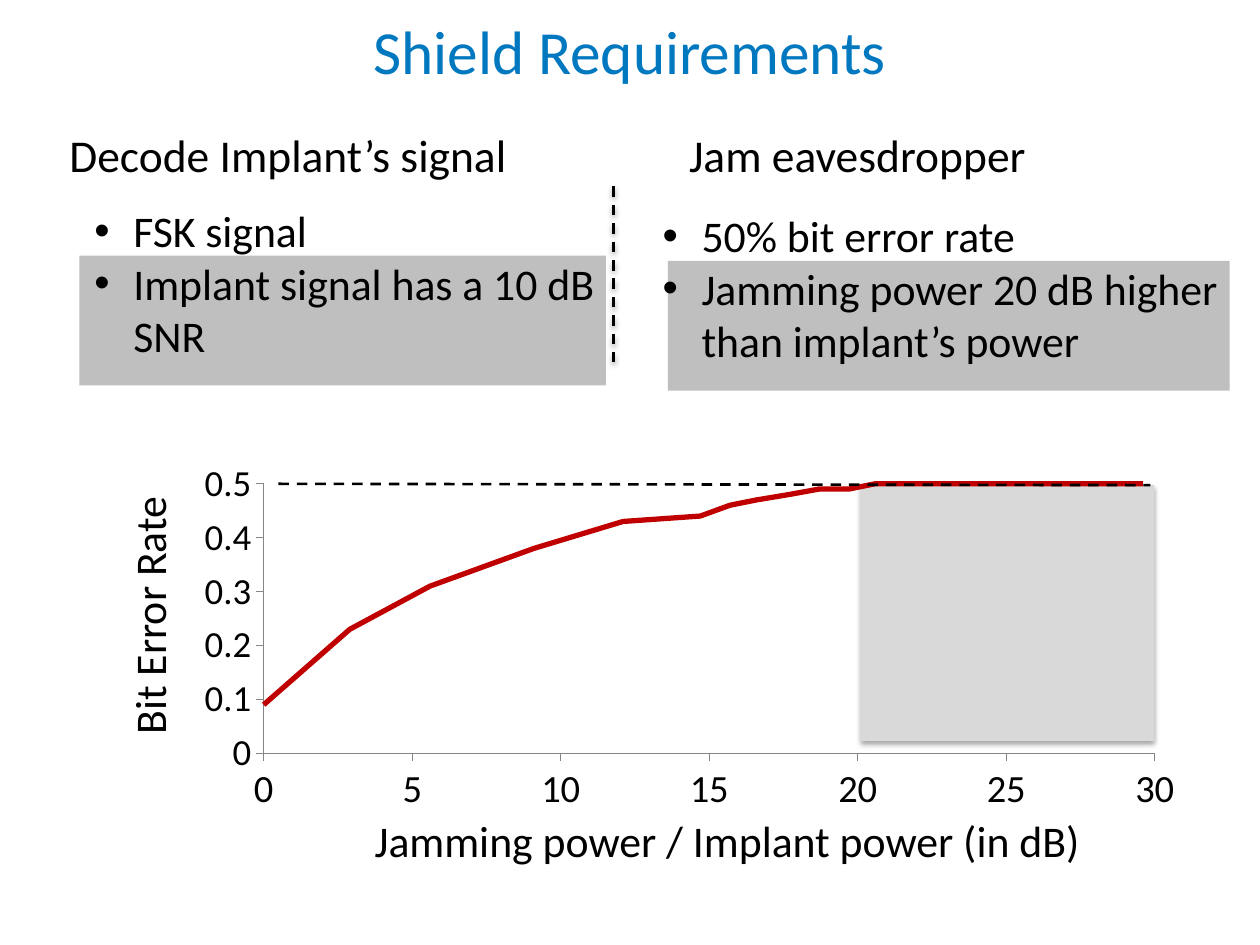
from dataclasses import dataclass

from lxml import etree
from pptx import Presentation
from pptx.chart.data import XyChartData
from pptx.dml.color import RGBColor
from pptx.enum.chart import XL_CHART_TYPE as ChartType, XL_TICK_MARK as TickMark
from pptx.enum.dml import MSO_LINE_DASH_STYLE as Dash
from pptx.enum.shapes import MSO_CONNECTOR as Connector, MSO_SHAPE as Shape
from pptx.enum.text import MSO_ANCHOR as Anchor, PP_ALIGN as Align
from pptx.oxml import parse_xml
from pptx.oxml.ns import nsdecls, qn
from pptx.util import Emu, Inches, Pt

BLACK = RGBColor(0x00, 0x00, 0x00)
BLUE = RGBColor(0x00, 0x78, 0xC0)
RED = RGBColor(0xC0, 0x00, 0x00)
MID_GRAY = RGBColor(0xBF, 0xBF, 0xBF)
LIGHT_GRAY = RGBColor(0xD9, 0xD9, 0xD9)
AXIS_GRAY = RGBColor(0x86, 0x86, 0x86)
FONT = "Calibri"
BODY_SIZE = 25


@dataclass(frozen=True)
class Box:
    left: float
    top: float
    width: float
    height: float

    def emu(self) -> tuple[Emu, ...]:
        return tuple(Inches(v) for v in (self.left, self.top, self.width, self.height))


@dataclass(frozen=True)
class Panel:
    box: Box
    color: RGBColor
    shadow_alpha: int = 0


@dataclass(frozen=True)
class Label:
    box: Box
    lines: tuple[str, ...]
    size: int = BODY_SIZE
    bulleted: bool = False
    centered: bool = False
    rotation: int = 0


@dataclass(frozen=True)
class DashedLine:
    start: tuple[float, float]
    end: tuple[float, float]
    shadow_alpha: int = 0


@dataclass(frozen=True)
class AxisFormat:
    maximum: float
    step: float
    size: int


PLOT = Box(2.09, 3.84, 7.07, 2.14)
CHART = Box(1.46, 3.6, 8.01, 2.92)
X_AXIS = AxisFormat(30, 5, 22)
Y_AXIS = AxisFormat(0.5, 0.1, 21)

ERROR_RATES = [
    (0, 0.09), (2.9, 0.23), (5.6, 0.31), (9.1, 0.38),
    (12.1, 0.43), (14.7, 0.44), (15.7, 0.46), (16.6, 0.47),
    (17.7, 0.48), (18.7, 0.49), (19.7, 0.49), (20.6, 0.5),
    (22.7, 0.5), (25, 0.5), (26.7, 0.5), (29.6, 0.5),
]

PANELS = [
    Panel(Box(5.3, 2.07, 4.46, 1.03), MID_GRAY),
    Panel(Box(0.63, 2.03, 4.18, 1.03), MID_GRAY),
    Panel(Box(6.83, 3.85, 2.33, 2.03), LIGHT_GRAY, 35),
]
DIVIDER = DashedLine((4.87, 1.48), (4.87, 2.87), 38)
ERROR_LIMIT = DashedLine((2.21, 3.84), (9.13, 3.85))
LABELS = [
    Label(Box(0.37, 0.96, 4.18, 0.54), (" Decode Implant’s signal",), 26),
    Label(Box(5.37, 0.96, 4.18, 0.54), ("Jam eavesdropper",), 26),
    Label(Box(0.65, 1.57, 4.22, 1.36),
          ("FSK signal", "Implant signal has a 10 dB SNR"), bulleted=True),
    Label(Box(5.16, 1.61, 4.61, 1.36),
          ("50% bit error rate", "Jamming power 20 dB higher than implant’s power"),
          bulleted=True),
    Label(Box(1.27, 6.04, 9, 1.25), ("Jamming power / Implant power (in dB)",),
          centered=True),
    Label(Box(-3.32, 4.26, 9, 1.25), ("Bit Error Rate",), centered=True, rotation=270),
]


def apply_format(target, values: dict) -> None:
    for attribute, value in values.items():
        setattr(target, attribute, value)


def format_font(font, size: int, color: RGBColor = BLACK) -> None:
    apply_format(font, {"name": FONT, "size": Pt(size), "bold": False})
    font.color.rgb = color


def set_shadow(properties, alpha: int) -> None:
    effects = etree.SubElement(properties, qn("a:effectLst"))
    if alpha:
        shadow = etree.SubElement(
            effects, qn("a:outerShdw"), blurRad=str(Pt(3.1)), dist=str(Pt(1.7)),
            dir="5400000", rotWithShape="0")
        color = etree.SubElement(shadow, qn("a:srgbClr"), val=str(BLACK))
        etree.SubElement(color, qn("a:alpha"), val=str(alpha * 1000))


def draw_panel(slide, panel: Panel) -> None:
    rectangle = slide.shapes.add_shape(Shape.RECTANGLE, *panel.box.emu())
    rectangle.fill.solid()
    rectangle.fill.fore_color.rgb = panel.color
    rectangle.line.fill.background()
    set_shadow(rectangle._element.spPr, panel.shadow_alpha)


def draw_line(slide, dashed: DashedLine) -> None:
    ends = [Inches(v) for v in dashed.start + dashed.end]
    connector = slide.shapes.add_connector(Connector.STRAIGHT, *ends)
    connector.line.color.rgb = BLACK
    apply_format(connector.line, {"width": Pt(1.5), "dash_style": Dash.DASH})
    set_shadow(connector._element.spPr, dashed.shadow_alpha)


def add_bullet(paragraph) -> None:
    properties = paragraph._p.get_or_add_pPr()
    indent = Inches(0.31)
    properties.set("marL", str(indent))
    properties.set("indent", str(-indent))
    etree.SubElement(properties, qn("a:buFont"), typeface="Arial")
    etree.SubElement(properties, qn("a:buChar"), char="•")


def draw_label(slide, label: Label) -> None:
    holder = slide.shapes.add_textbox(*label.box.emu())
    holder.rotation = label.rotation
    frame = holder.text_frame
    apply_format(frame, {
        "word_wrap": True,
        "vertical_anchor": Anchor.MIDDLE if label.centered else Anchor.TOP,
        "text": "\n".join(label.lines),
    })
    for paragraph in frame.paragraphs:
        paragraph.alignment = Align.CENTER if label.centered else Align.LEFT
        format_font(paragraph.runs[0].font, label.size)
        if label.bulleted:
            add_bullet(paragraph)


def format_axis(axis, axis_format: AxisFormat) -> None:
    apply_format(axis, {
        "minimum_scale": 0, "maximum_scale": axis_format.maximum,
        "major_unit": axis_format.step, "has_major_gridlines": False,
        "major_tick_mark": TickMark.OUTSIDE, "minor_tick_mark": TickMark.NONE,
    })
    apply_format(axis.tick_labels, {"number_format": "General",
                                    "number_format_is_linked": False})
    format_font(axis.tick_labels.font, axis_format.size)
    axis.format.line.color.rgb = AXIS_GRAY
    axis.format.line.width = Pt(0.75)


def place_plot(chart) -> None:
    plot_area = chart._chartSpace.chart.plotArea
    for layout in plot_area.findall(qn("c:layout")):
        plot_area.remove(layout)
    fractions = {
        "x": (PLOT.left - CHART.left) / CHART.width,
        "y": (PLOT.top - CHART.top) / CHART.height,
        "w": PLOT.width / CHART.width,
        "h": PLOT.height / CHART.height,
    }
    modes = '<c:layoutTarget val="inner"/><c:xMode val="edge"/><c:yMode val="edge"/>'
    sizes = "".join(f'<c:{key} val="{value:.3f}"/>' for key, value in fractions.items())
    plot_area.insert(0, parse_xml(
        f'<c:layout {nsdecls("c")}><c:manualLayout>{modes}{sizes}</c:manualLayout></c:layout>'))
    clear = f'<c:spPr {nsdecls("c", "a")}><a:noFill/><a:ln><a:noFill/></a:ln></c:spPr>'
    plot_area.append(parse_xml(clear))
    chart._chartSpace.chart.addnext(parse_xml(clear))


def draw_chart(slide) -> None:
    data = XyChartData()
    points = data.add_series("Series 1")
    for power, rate in ERROR_RATES:
        points.add_data_point(power, rate)
    chart = slide.shapes.add_chart(
        ChartType.XY_SCATTER_LINES_NO_MARKERS, *CHART.emu(), data).chart
    apply_format(chart, {"has_legend": False, "has_title": False})
    format_font(chart.font, 10)
    chart.plots[0].vary_by_categories = False
    curve = chart.plots[0].series[0]
    curve.smooth = False
    curve.format.line.color.rgb = RED
    curve.format.line.width = Pt(3)
    format_axis(chart.category_axis, X_AXIS)
    format_axis(chart.value_axis, Y_AXIS)
    place_plot(chart)


def draw_title(slide) -> None:
    title = slide.shapes.title
    left, top, width, height = Box(0, 0.01, 10, 0.77).emu()
    apply_format(title, {"left": left, "top": top, "width": width, "height": height})
    apply_format(title.text_frame, {"text": "Shield Requirements", "word_wrap": True,
                                    "vertical_anchor": Anchor.MIDDLE})
    paragraph = title.text_frame.paragraphs[0]
    paragraph.alignment = Align.CENTER
    format_font(paragraph.runs[0].font, 35, BLUE)


def main() -> None:
    deck = Presentation()
    apply_format(deck, {"slide_width": Inches(10), "slide_height": Inches(7.5)})
    slide = deck.slides.add_slide(deck.slide_layouts[5])
    draw_title(slide)
    for panel in PANELS:
        draw_panel(slide, panel)
    draw_chart(slide)
    for dashed in (DIVIDER, ERROR_LIMIT):
        draw_line(slide, dashed)
    for label in LABELS:
        draw_label(slide, label)
    deck.save("out.pptx")


if __name__ == "__main__":
    main()
